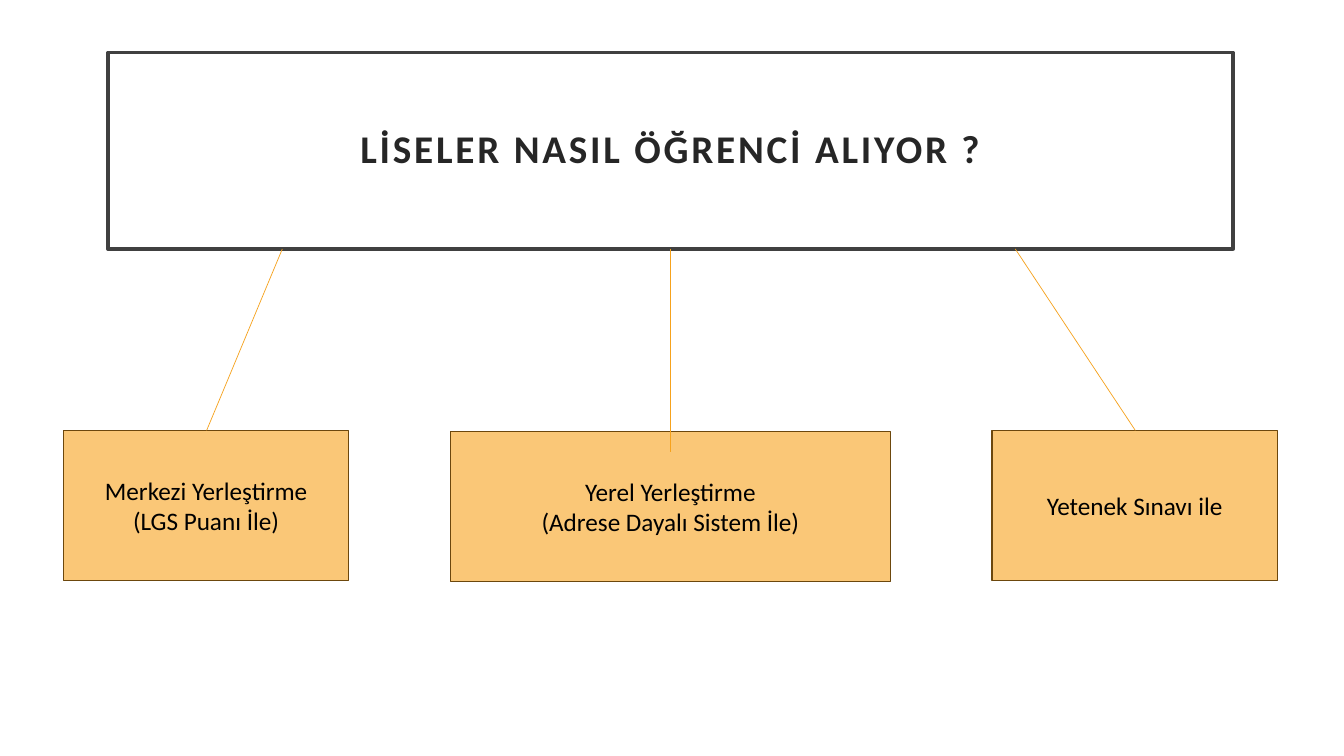
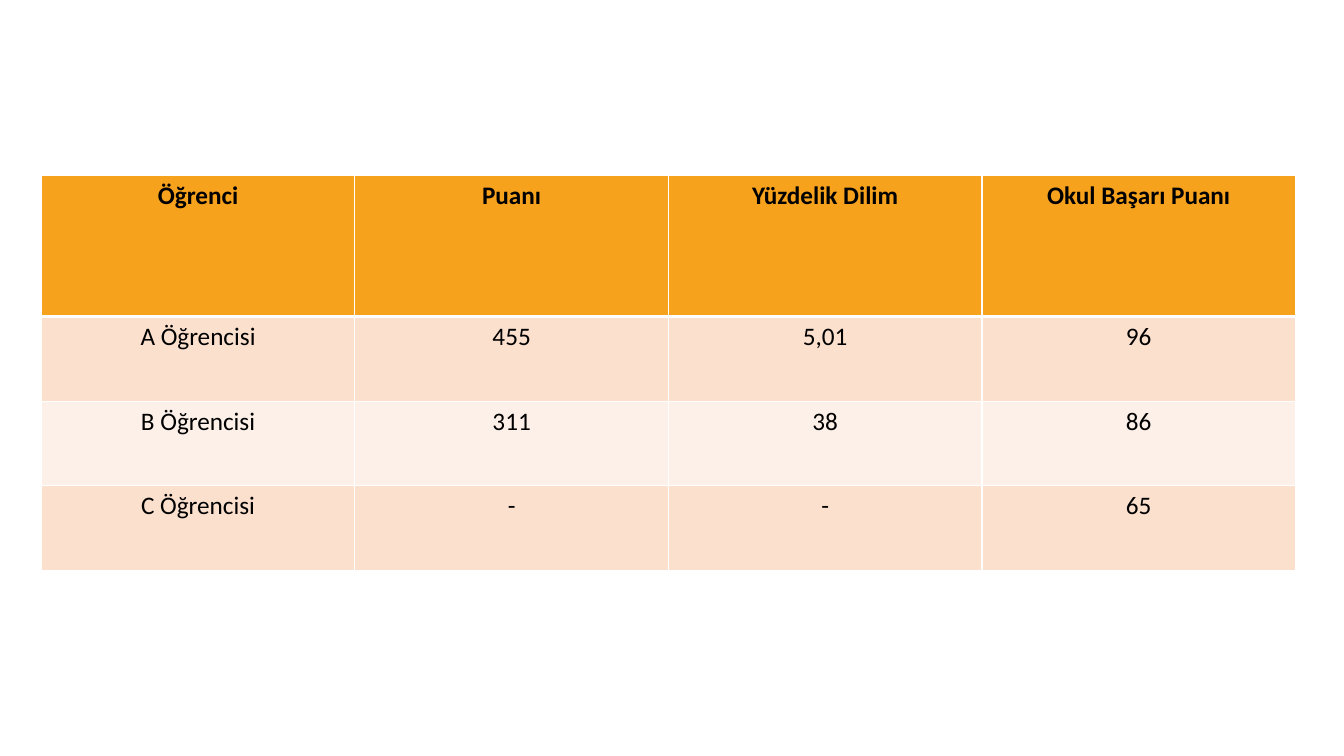
from dataclasses import dataclass

import pptx
import pptx.dml.color
import pptx.enum.shapes
import pptx.enum.text
import pptx.oxml.ns
import pptx.util
from lxml import etree

Inches = pptx.util.Inches
Pt = pptx.util.Pt
qn = pptx.oxml.ns.qn

# Shared style
FONT = "Calibri"
WHITE, BLACK = "FFFFFF", "000000"
TITLE_INK, TITLE_LINE = "262626", "404040"
ORANGE, BOX_FILL, BOX_LINE = "F6A21D", "FAC777", "6C470D"
BANDS = ("FBE0CD", "FDF0E8")


@dataclass
class Box:
    left: float
    top: float
    width: float
    height: float
    lines: list[str]


@dataclass
class Link:
    x1: float
    y1: float
    x2: float
    y2: float


TITLE = Box(1.07, 0.52, 11.16, 1.95, ["LİSELER NASIL ÖĞRENCİ ALIYOR ?"])
ROUTES = [
    Box(0.63, 4.27, 2.83, 1.49, ["Merkezi Yerleştirme", "(LGS Puanı İle)"]),
    Box(4.47, 4.28, 4.36, 1.49, ["Yerel Yerleştirme", "(Adrese Dayalı Sistem İle)"]),
    Box(9.84, 4.27, 2.83, 1.49, ["Yetenek Sınavı ile"]),
]
LINKS = [
    Link(2.8, 2.47, 2.05, 4.27),
    Link(6.65, 2.47, 6.65, 4.48),
    Link(10.07, 2.47, 11.26, 4.27),
]
SCORES = [
    ["Öğrenci", "Puanı", "Yüzdelik Dilim", "Okul Başarı Puanı"],
    ["A Öğrencisi", "455", "5,01", "96"],
    ["B Öğrencisi", "311", "38", "86"],
    ["C Öğrencisi", "-", "-", "65"],
]
COL_WIDTH = 3.11
ROW_HEIGHTS = [1.4, 0.84, 0.84, 0.84]


def rgb(value: str) -> pptx.dml.color.RGBColor:
    return pptx.dml.color.RGBColor.from_string(value)


def write(tf, lines: list[str], size: float = 18, color: str = BLACK,
          bold: bool = False, line_spacing: float = 1.0, tracking: float = 0) -> None:
    """Fill a text frame with centred paragraphs; tracking is in points."""
    for i, line in enumerate(lines):
        p = tf.paragraphs[0] if i == 0 else tf.add_paragraph()
        p.alignment = pptx.enum.text.PP_ALIGN.CENTER
        p.line_spacing = line_spacing
        r = p.add_run()
        r.text = line
        r.font.name = FONT
        r.font.size = Pt(size)
        r.font.bold = bold
        r.font.color.rgb = rgb(color)
        if tracking:
            r.font._element.set("spc", str(round(tracking * 100)))


def add_box(s, box: Box, fill: str, line: str, weight: float,
            inset: float | None = None, **fmt) -> None:
    sp = s.shapes.add_shape(
        pptx.enum.shapes.MSO_SHAPE.RECTANGLE,
        Inches(box.left), Inches(box.top), Inches(box.width), Inches(box.height))
    sp.shadow.inherit = False
    sp.fill.solid()
    sp.fill.fore_color.rgb = rgb(fill)
    sp.line.color.rgb = rgb(line)
    sp.line.width = Pt(weight)
    tf = sp.text_frame
    tf.word_wrap = True
    tf.vertical_anchor = pptx.enum.text.MSO_ANCHOR.MIDDLE
    if inset is not None:
        tf.margin_left = tf.margin_right = Inches(inset)
        tf.margin_top = tf.margin_bottom = Inches(inset)
    write(tf, box.lines, **fmt)


def add_link(s, link: Link) -> None:
    cn = s.shapes.add_connector(
        pptx.enum.shapes.MSO_CONNECTOR.STRAIGHT,
        Inches(link.x1), Inches(link.y1), Inches(link.x2), Inches(link.y2))
    cn.line.color.rgb = rgb(ORANGE)
    cn.line.width = Pt(0.5)
    etree.SubElement(cn._element.spPr, qn("a:effectLst"))


def set_borders(cell, color: str, top: float, bottom: float) -> None:
    tc_pr = cell._tc.get_or_add_tcPr()
    for side, weight in (("L", 1), ("R", 1), ("T", top), ("B", bottom)):
        ln = etree.SubElement(tc_pr, qn(f"a:ln{side}"), w=str(Pt(weight)))
        fill = etree.SubElement(ln, qn("a:solidFill"))
        etree.SubElement(fill, qn("a:srgbClr"), val=color)


def add_scores(s, left: float, top: float) -> None:
    cols = len(SCORES[0])
    table = s.shapes.add_table(
        len(SCORES), cols, Inches(left), Inches(top),
        Inches(COL_WIDTH * cols), Inches(sum(ROW_HEIGHTS))).table
    for col in table.columns:
        col.width = Inches(COL_WIDTH)
    for i, values in enumerate(SCORES):
        table.rows[i].height = Inches(ROW_HEIGHTS[i])
        header = i == 0
        for j, value in enumerate(values):
            cell = table.cell(i, j)
            # The rule under the header is heavier than the rest
            set_borders(cell, WHITE, top=3 if i == 1 else 1, bottom=3 if header else 1)
            cell.fill.solid()
            cell.fill.fore_color.rgb = rgb(ORANGE if header else BANDS[(i - 1) % 2])
            write(cell.text_frame, [value], bold=header)


def add_slide(prs):
    s = prs.slides.add_slide(prs.slide_layouts[6])
    s.background.fill.solid()
    s.background.fill.fore_color.rgb = rgb(WHITE)
    return s


def main() -> None:
    prs = pptx.Presentation()
    prs.slide_width, prs.slide_height = Inches(13.33), Inches(7.5)

    # Slide 1: admission routes
    s = add_slide(prs)
    add_box(s, TITLE, WHITE, TITLE_LINE, 2.5, inset=0.2, size=28,
            color=TITLE_INK, bold=True, line_spacing=0.9, tracking=2)
    for route in ROUTES:
        add_box(s, route, BOX_FILL, BOX_LINE, 1)
    for link in LINKS:
        add_link(s, link)

    # Slide 2: example scores
    add_scores(add_slide(prs), 0.41, 1.74)

    prs.save("out.pptx")


if __name__ == "__main__":
    main()
